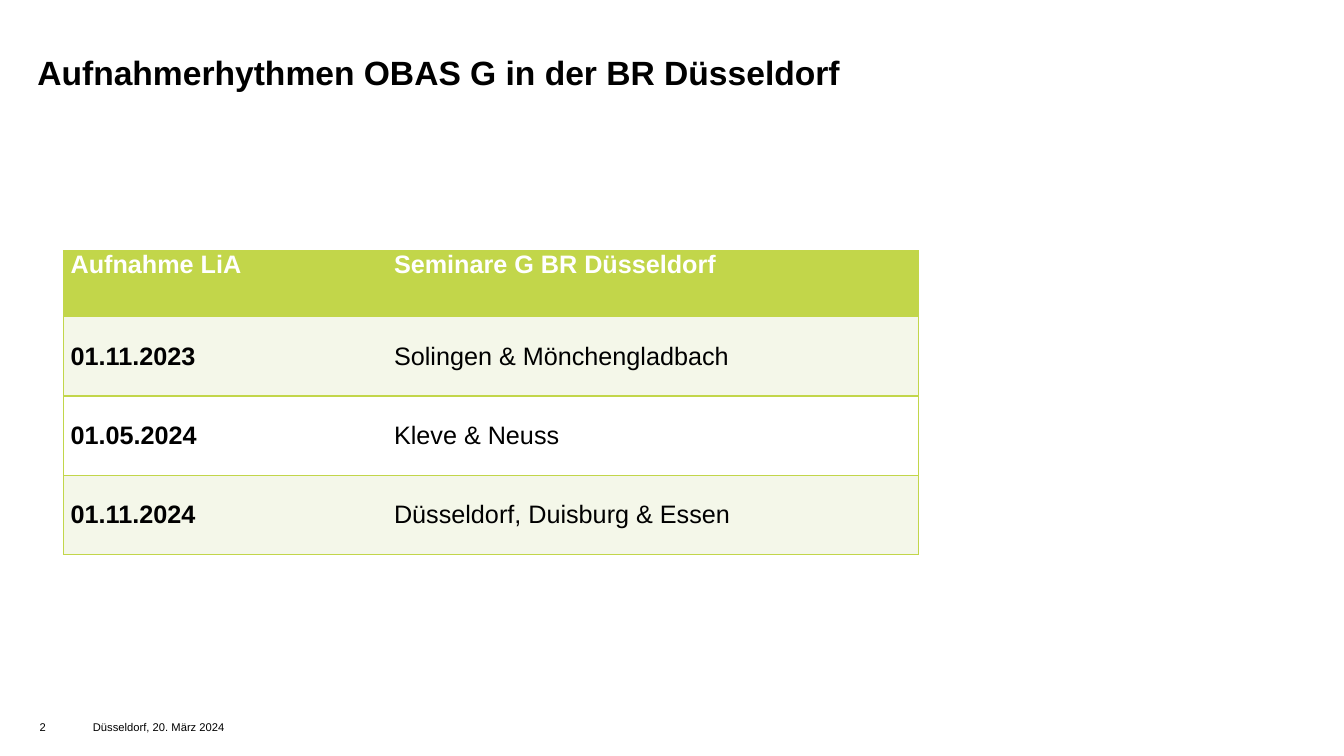
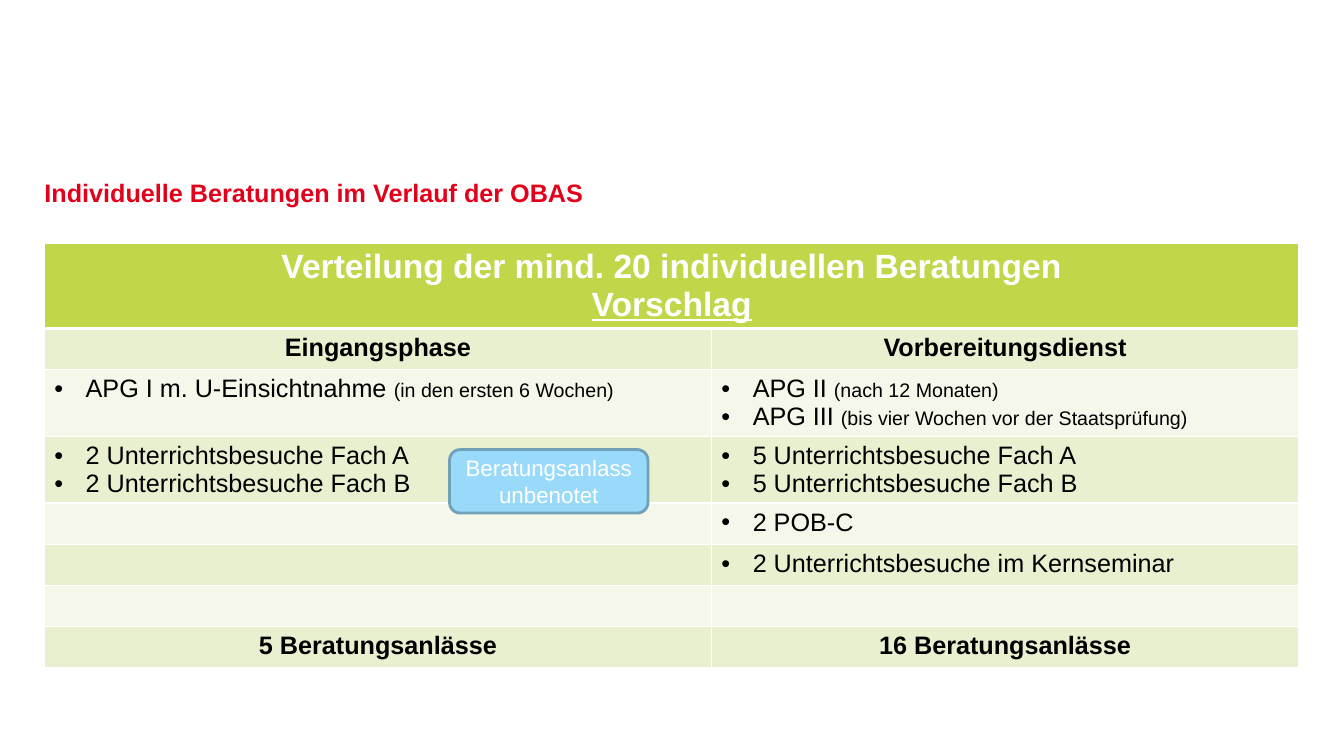
from dataclasses import dataclass
from typing import Optional

from lxml import etree
from pptx import Presentation
from pptx import util as u
from pptx.dml.color import RGBColor
from pptx.enum import shapes, text
from pptx.oxml import ns

# Shared style
FONT = "Arial"
BLACK, WHITE, RED = "000000", "FFFFFF", "E2001A"
LIME, LIME_LIGHT, LIME_PALE = "C2D64A", "E9F0D0", "F4F7E9"
SKY, SKY_DARK = "99D9F9", "71A1B8"
TITLE_WIDTH, TITLE_HEIGHT = u.Cm(31.6), u.Cm(1.8)
BULLET_INDENT = u.Cm(0.79)
TOP, MIDDLE = text.MSO_ANCHOR.TOP, text.MSO_ANCHOR.MIDDLE


@dataclass(frozen=True)
class Line:
    """One paragraph; note is a smaller remark after the words."""
    words: str
    note: str = ""
    size: float = 18
    color: str = BLACK
    bold: bool = False
    underline: bool = False
    bullet: bool = False
    centered: bool = False


@dataclass(frozen=True)
class Border:
    color: str
    width: float = 1


@dataclass(frozen=True)
class CellStyle:
    fill: str
    left: Optional[Border] = None
    right: Optional[Border] = None
    top: Optional[Border] = None
    bottom: Optional[Border] = None
    anchor: text.MSO_ANCHOR = TOP
    inset_x: float = 0.25
    inset_y: float = 0.13


def rgb(color: str) -> RGBColor:
    return RGBColor.from_string(color)


def add_bullet(para) -> None:
    props = para._p.get_or_add_pPr()
    props.set("marL", str(BULLET_INDENT))
    props.set("indent", str(-BULLET_INDENT))
    etree.SubElement(props, ns.qn("a:buFont")).set("typeface", FONT)
    etree.SubElement(props, ns.qn("a:buChar")).set("char", "•")


def write(frame, lines: list[Line]) -> None:
    for index, line in enumerate(lines):
        para = frame.add_paragraph() if index else frame.paragraphs[0]
        if line.bullet:
            add_bullet(para)
        para.alignment = (text.PP_ALIGN.CENTER if line.centered
                          else text.PP_ALIGN.LEFT)
        font = para.font
        font.name, font.size = FONT, u.Pt(line.size)
        font.bold, font.underline = line.bold, line.underline
        font.color.rgb = rgb(line.color)
        para.add_run().text = line.words
        if line.note:
            span = para.add_run()
            span.text = line.note
            span.font.size = u.Pt(14)


def clear_insets(frame) -> None:
    frame.margin_left = frame.margin_right = 0
    frame.margin_top = frame.margin_bottom = 0
    frame.word_wrap = True


def add_titled_page(deck, title: Line, left: float, top: float):
    page = deck.slides.add_slide(deck.slide_layouts[5])
    box = page.shapes.title
    box.left, box.top = u.Cm(left), u.Cm(top)
    box.width, box.height = TITLE_WIDTH, TITLE_HEIGHT
    frame = box.text_frame
    clear_insets(frame)
    frame.auto_size = text.MSO_AUTO_SIZE.NONE
    frame.vertical_anchor = MIDDLE
    write(frame, [title])
    return page


def add_footer_text(page, words: str, left: float, width: float) -> None:
    box = page.shapes.add_textbox(u.Cm(left), u.Cm(18.14),
                                  u.Cm(width), u.Cm(0.9))
    clear_insets(box.text_frame)
    write(box.text_frame, [Line(words, size=8)])


def add_plain_table(page, left: float, top: float,
                    widths: list[float], heights: list[float]):
    table = page.shapes.add_table(
        len(heights), len(widths), u.Cm(left), u.Cm(top),
        u.Cm(sum(widths)), u.Cm(sum(heights))).table
    table.first_row = table.horz_banding = False
    for column, width in zip(table.columns, widths):
        column.width = u.Cm(width)
    for row, height in zip(table.rows, heights):
        row.height = u.Cm(height)
    return table


def style_cell(cell, style: CellStyle) -> None:
    props = cell._tc.get_or_add_tcPr()
    edges = {"a:lnL": style.left, "a:lnR": style.right,
             "a:lnT": style.top, "a:lnB": style.bottom}
    for tag, border in edges.items():
        edge = etree.SubElement(props, ns.qn(tag))
        if border is None:
            etree.SubElement(edge, ns.qn("a:noFill"))
            continue
        edge.set("w", str(u.Pt(border.width)))
        paint = etree.SubElement(edge, ns.qn("a:solidFill"))
        etree.SubElement(paint, ns.qn("a:srgbClr")).set("val", border.color)
    cell.fill.solid()
    cell.fill.fore_color.rgb = rgb(style.fill)
    cell.vertical_anchor = style.anchor
    cell.margin_left = cell.margin_right = u.Cm(style.inset_x)
    cell.margin_top = cell.margin_bottom = u.Cm(style.inset_y)


def build_intake_page(deck) -> None:
    page = add_titled_page(
        deck, Line("Aufnahmerhythmen OBAS G in der BR Düsseldorf",
                   size=24, bold=True), 0.94, 0.91)

    # Intake dates and seminars
    rows = [("Aufnahme LiA", "Seminare G BR Düsseldorf"),
            ("01.11.2023", "Solingen & Mönchengladbach"),
            ("01.05.2024", "Kleve & Neuss"),
            ("01.11.2024", "Düsseldorf, Duisburg & Essen")]
    table = add_plain_table(page, 1.6, 6.32, [8.15, 13.39],
                            [1.66] + [2] * 3)
    rule = Border(LIME)
    for r, row in enumerate(rows):
        header = r == 0
        fill = LIME if header else (LIME_PALE if r % 2 else WHITE)
        for c, words in enumerate(row):
            cell = table.cell(r, c)
            style_cell(cell, CellStyle(
                fill, left=None if c else rule, right=rule if c else None,
                top=rule, bottom=rule, anchor=TOP if header else MIDDLE,
                inset_x=0.18, inset_y=0))
            write(cell.text_frame, [Line(
                words, color=WHITE if header else BLACK,
                bold=header or c == 0)])

    # Footer
    add_footer_text(page, "Düsseldorf, 20. März 2024", 2.34, 7.72)
    add_footer_text(page, "2", 1, 1.07)


def heading(words: str) -> list[Line]:
    return [Line(words, bold=True, centered=True)]


def item(words: str, note: str = "") -> Line:
    return Line(words, note, bullet=True)


def visits(count: int) -> list[Line]:
    return [item(f"{count} Unterrichtsbesuche Fach {subject}")
            for subject in "AB"]


def build_advice_page(deck) -> None:
    page = add_titled_page(
        deck, Line("Individuelle Beratungen im Verlauf der OBAS",
                   color=RED, bold=True), 1.12, 3.94)

    # Advice sessions per phase
    banner = [Line(words, size=24, color=WHITE, bold=True, centered=True,
                   underline=underlined)
              for words, underlined in (
                  ("Verteilung der mind. 20 individuellen Beratungen", False),
                  ("Vorschlag", True))]
    rows = [
        (banner, []),
        (heading("Eingangsphase"), heading("Vorbereitungsdienst")),
        ([item("APG I m. U-Einsichtnahme ", "(in den ersten 6 Wochen)")],
         [item("APG II ", "(nach 12 Monaten)"),
          item("APG III ", "(bis vier Wochen vor der Staatsprüfung)")]),
        (visits(2), visits(5)),
        ([], [item("2 POB-C")]),
        ([], [item("2 Unterrichtsbesuche im Kernseminar")]),
        ([], []),
        (heading("5 Beratungsanlässe"), heading("16 Beratungsanlässe")),
    ]
    table = add_plain_table(page, 1.12, 6.13, [16.81, 14.8],
                            [2.14, 1.03, 1.67, 1.67] + [1.03] * 4)
    thin, thick = Border(WHITE), Border(WHITE, 3)
    for r, row in enumerate(rows):
        fill = LIME if r == 0 else (LIME_LIGHT if r % 2 else LIME_PALE)
        for c, lines in enumerate(row):
            cell = table.cell(r, c)
            style_cell(cell, CellStyle(
                fill, left=thin, right=thin, top=thick if r == 1 else thin,
                bottom=thick if r == 0 else thin))
            write(cell.text_frame, lines)
    table.cell(0, 0).merge(table.cell(0, 1))

    # Ungraded session label
    label = page.shapes.add_shape(
        shapes.MSO_SHAPE.ROUNDED_RECTANGLE,
        u.Cm(11.33), u.Cm(11.33), u.Cm(5), u.Cm(1.6))
    label.shadow.inherit = False
    label.fill.solid()
    label.fill.fore_color.rgb = rgb(SKY)
    label.line.color.rgb = rgb(SKY_DARK)
    label.line.width = u.Pt(2)
    label.text_frame.word_wrap = True
    label.text_frame.vertical_anchor = MIDDLE
    write(label.text_frame, [Line("Beratungsanlass unbenotet", size=16,
                                  color=WHITE, centered=True)])


def main() -> None:
    deck = Presentation()
    deck.slide_width, deck.slide_height = u.Cm(33.87), u.Cm(19.05)
    build_intake_page(deck)
    build_advice_page(deck)
    deck.save("out.pptx")


if __name__ == "__main__":
    main()
